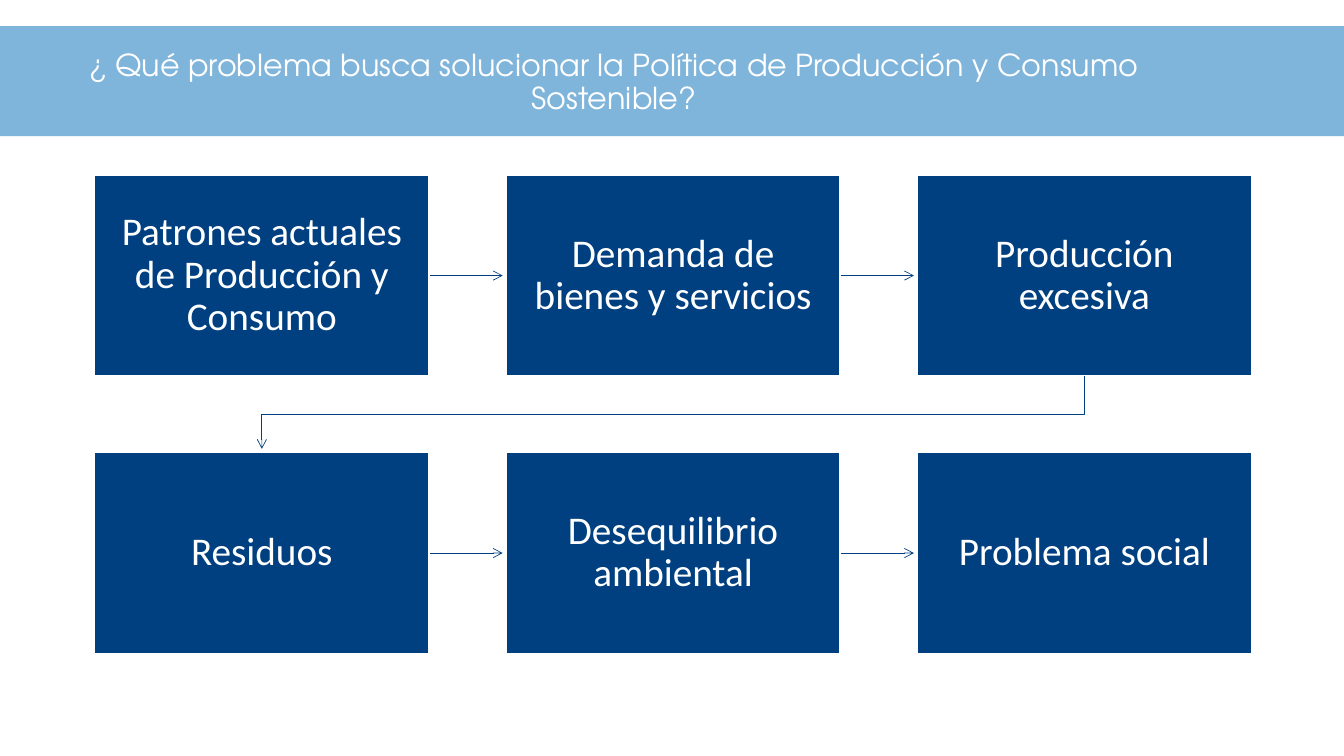
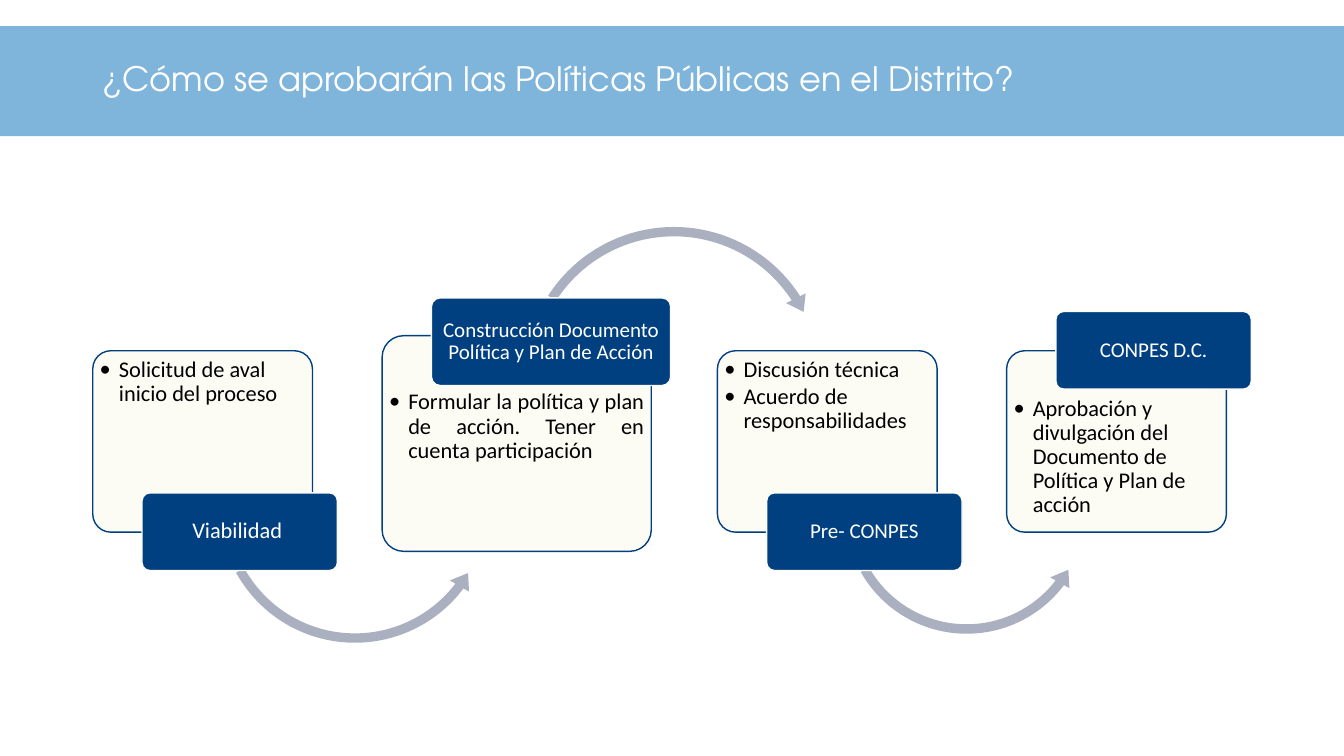
import itertools
from dataclasses import dataclass

import lxml.etree
import pptx
import pptx.dml.color
import pptx.enum.shapes
import pptx.enum.text
import pptx.oxml.ns
import pptx.util

WIDE, HIGH = 13.333, 7.5
HEX = {
    "navy": "004080",
    "band": "1C7ABF",
    "cream": "FCFCF5",
    "arc": "ABB0C0",
    "white": "FFFFFF",
    "black": "000000",
}
HEAD_FONT, BODY_FONT = "TeX Gyre Adventor", "Calibri"
SHAPE = pptx.enum.shapes.MSO_SHAPE
ALIGN = pptx.enum.text.PP_ALIGN
ANCHOR = pptx.enum.text.MSO_ANCHOR
qn = pptx.oxml.ns.qn


@dataclass(frozen=True)
class Box:
    """A frame in percent of the slide's width and height."""
    x: float
    y: float
    w: float
    h: float

    def frame(self) -> tuple:
        return across(self.x), down(self.y), across(self.w), down(self.h)


@dataclass(frozen=True)
class Style:
    size: float
    color: str = "white"
    font: str = BODY_FONT
    align: ALIGN = ALIGN.CENTER
    bullet: bool = False


@dataclass(frozen=True)
class Arc:
    kind: SHAPE
    box: Box
    bends: tuple


@dataclass(frozen=True)
class Step:
    card: Box
    points: tuple
    tag: str
    tag_y: float
    tag_h: float = 10.27
    tag_size: float = 15
    align: ALIGN = ALIGN.LEFT
    arc: Arc | None = None


def across(share: float) -> int:
    return pptx.util.Inches(WIDE * share / 100)


def down(share: float) -> int:
    return pptx.util.Inches(HIGH * share / 100)


def shade(name: str) -> pptx.dml.color.RGBColor:
    return pptx.dml.color.RGBColor.from_string(HEX[name])


def add_form(slide, kind: SHAPE, box: Box, fill: str, line: str = "", alpha: int = 100):
    form = slide.shapes.add_shape(kind, *box.frame())
    form.shadow.inherit = False
    form.fill.solid()
    form.fill.fore_color.rgb = shade(fill)
    if alpha < 100:
        tint = form.fill._xPr.find(f".//{qn('a:srgbClr')}")
        lxml.etree.SubElement(tint, qn("a:alpha"), val=str(alpha * 1000))
    if line:
        form.line.color.rgb = shade(line)
        form.line.width = pptx.util.Pt(1)
    else:
        form.line.fill.background()
    return form


def write(form, lines: tuple, style: Style, pads: tuple, anchor: ANCHOR = ANCHOR.MIDDLE) -> None:
    """Fill a shape with paragraphs; pads are side and end inches."""
    frame = form.text_frame
    frame.word_wrap = True
    frame.vertical_anchor = anchor
    side, end = map(pptx.util.Inches, pads)
    frame.margin_left = frame.margin_right = side
    frame.margin_top = frame.margin_bottom = end
    for index, line in enumerate(lines):
        para = frame.add_paragraph() if index else frame.paragraphs[0]
        if style.bullet:
            props = para._p.get_or_add_pPr()
            dent = pptx.util.Inches(0.19)
            props.set("marL", str(dent))
            props.set("indent", str(-dent))
            lxml.etree.SubElement(props, qn("a:buFont"), typeface=style.font)
            lxml.etree.SubElement(props, qn("a:buChar"), char="•")
            para.space_after = pptx.util.Pt(2.4)
        para.alignment = style.align
        para.line_spacing = 0.9
        run = para.add_run()
        run.text = line
        run.font.size = pptx.util.Pt(style.size)
        run.font.name = style.font
        run.font.color.rgb = shade(style.color)


def start(deck, title: str, x: float, y: float, size: float, align: ALIGN):
    """Add a slide with the shared band and its title."""
    slide = deck.slides.add_slide(deck.slide_layouts[6])
    add_form(slide, SHAPE.RECTANGLE, Box(0, 3.47, 100, 14.53), "band", alpha=56)
    text = slide.shapes.add_textbox(*Box(x, y, 86.25, 10.53).frame())
    write(text, (title,), Style(size, font=HEAD_FONT, align=align), (0.1, 0.05))
    return slide


def tip(path) -> None:
    """Give a line its thin navy stroke and open arrowhead."""
    path.line.color.rgb = shade("navy")
    path.line.width = pptx.util.Pt(0.5)
    stroke = path.line._get_or_add_ln()
    lxml.etree.SubElement(stroke, qn("a:tailEnd"), type="arrow")


def link(slide, x: float, y: float, end: float) -> None:
    path = slide.shapes.add_connector(
        pptx.enum.shapes.MSO_CONNECTOR.STRAIGHT, across(x), down(y), across(end), down(y))
    tip(path)
    lxml.etree.SubElement(path._element.spPr, qn("a:effectLst"))


def turn(slide, spots: list) -> None:
    """Draw an open path through the given percent points."""
    first, *rest = [(across(x), down(y)) for x, y in spots]
    pen = slide.shapes.build_freeform(*first)
    pen.add_line_segments(rest, close=False)
    path = pen.convert_to_shape()
    path.shadow.inherit = False
    path.fill.background()
    tip(path)


CAUSES = (
    ("Patrones actuales de Producción y Consumo", "Demanda de bienes y servicios",
     "Producción excesiva"),
    ("Residuos", "Desequilibrio ambiental", "Problema social"),
)


def draw_chain(deck) -> None:
    slide = start(
        deck, "¿ Qué problema busca solucionar la Política de Producción y Consumo Sostenible?",
        2.55, 5.73, 21.6, ALIGN.CENTER)
    left, top, wide, high = 7.05, 23.17, 24.87, 26.57
    col_step, row_step, gap = 30.6, 36.7, 0.25
    for row, col in itertools.product(range(2), range(3)):
        box = Box(left + col * col_step, top + row * row_step, wide, high)
        if col < 2:
            link(slide, box.x + wide, box.y + high / 2, box.x + col_step - gap)
        form = add_form(slide, SHAPE.RECTANGLE, box, "navy", "white")
        write(form, (CAUSES[row][col],), Style(28), (0.22, 0.22))
    mid, base, next_top = left + wide / 2, top + high, top + row_step
    fold = (base + next_top) / 2
    far = mid + 2 * col_step
    turn(slide, [(far, base), (far, fold), (mid, fold), (mid, next_top - 0.5)])


STEPS = (
    Step(Box(6.9, 46.4, 16.35, 24), ("Solicitud de aval inicio del proceso",),
         "Viabilidad ", 65.2, tag_size=16,
         arc=Arc(SHAPE.LEFT_CIRCULAR_ARROW, Box(15.83, 48.27, 21.15, 37.6),
                 (0.033, 4.088, 22.249, 90.65, 0.039))),
    Step(Box(28.43, 44.4, 20.03, 28.53),
         ("Formular la política y plan de acción. Tener en cuenta participación",),
         "Construcción Documento Política y Plan de Acción", 39.4, 11.6, align=ALIGN.JUSTIFY,
         arc=Arc(SHAPE.CIRCULAR_ARROW, Box(38.56, 29.2, 23.18, 41.2),
                 (0.03, 3.703, 196.396, 127.609, 0.035))),
    Step(Box(53.38, 46.4, 16.35, 24), ("Discusión técnica", "Acuerdo de responsabilidades"),
         "Pre- CONPES", 65.2,
         arc=Arc(SHAPE.LEFT_CIRCULAR_ARROW, Box(62.4, 50.8, 19.05, 33.87),
                 (0.037, 4.574, 22.329, 90.245, 0.043))),
    Step(Box(74.9, 46.4, 16.35, 24),
         ("Aprobación y divulgación del Documento de Política y Plan de acción",),
         "CONPES D.C.", 41.2),
)


def draw_step(slide, step: Step) -> None:
    """Draw a card, its text and arc, and the tag on its edge."""
    box = step.card
    card = add_form(slide, SHAPE.ROUNDED_RECTANGLE, box, "cream", "navy", 90)
    card.adjustments[0] = 0.1
    above = step.tag_y < box.y
    inset, tall = 0.55, box.h * 0.74
    top = box.y + box.h - inset - tall if above else box.y + inset
    text = slide.shapes.add_textbox(*Box(box.x + 0.3, top, box.w - 0.6, tall).frame())
    write(text, step.points, Style(16, "black", align=step.align, bullet=True),
          (0.03, 0.03), ANCHOR.TOP)
    if step.arc:
        arc = add_form(slide, step.arc.kind, step.arc.box, "arc")
        for index, bend in enumerate(step.arc.bends):
            arc.adjustments[index] = bend
    spot = Box(box.x + 3.67, step.tag_y, box.w * 8 / 9, step.tag_h)
    tag = add_form(slide, SHAPE.ROUNDED_RECTANGLE, spot, "navy", "cream")
    tag.adjustments[0] = 0.1
    write(tag, (step.tag,), Style(step.tag_size), (0.02, 0.02))


def draw_steps(deck) -> None:
    slide = start(deck, "¿Cómo se aprobarán las Políticas Públicas en el Distrito?",
                  6.9, 5.4, 24, ALIGN.LEFT)
    for step in STEPS:
        draw_step(slide, step)


def main() -> None:
    deck = pptx.Presentation()
    deck.slide_width = pptx.util.Inches(WIDE)
    deck.slide_height = pptx.util.Inches(HIGH)
    draw_chain(deck)
    draw_steps(deck)
    deck.save("out.pptx")


if __name__ == "__main__":
    main()
